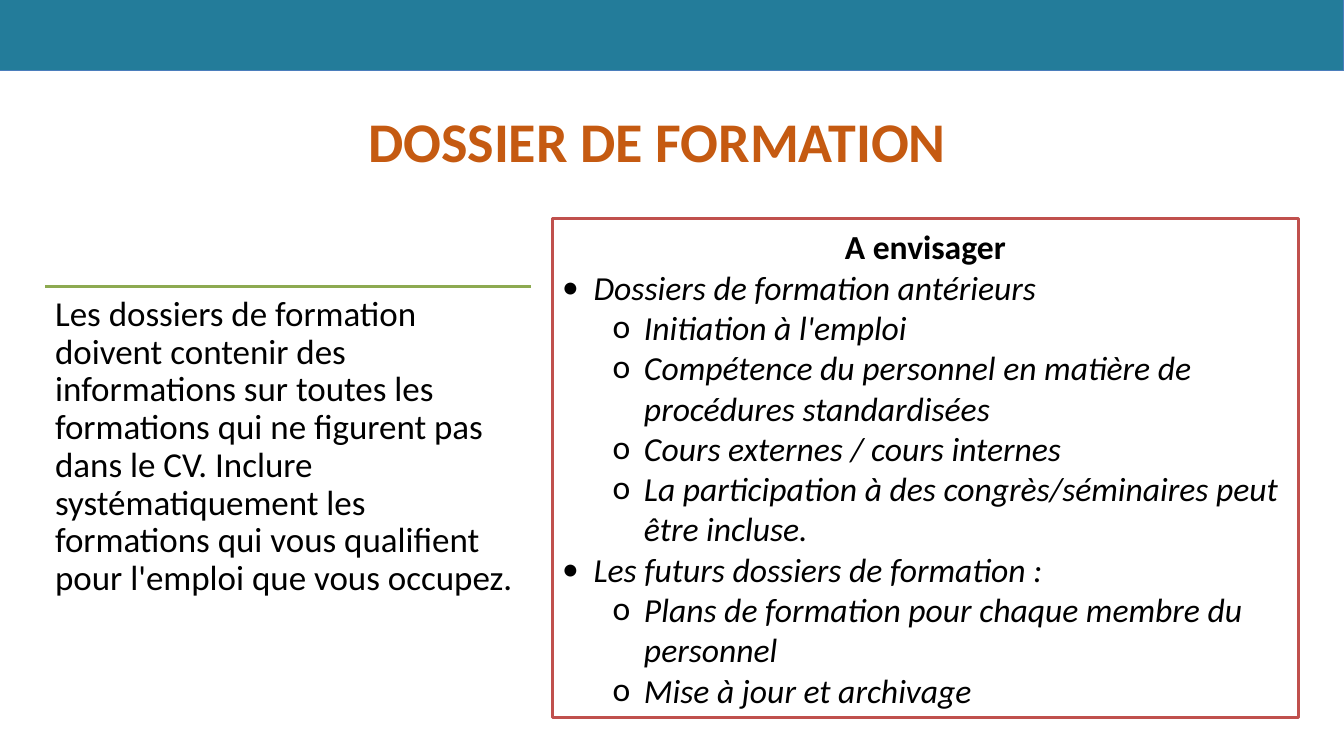
from dataclasses import dataclass

from lxml.etree import SubElement
from pptx import Presentation
from pptx.dml.color import RGBColor as Rgb
from pptx.enum.shapes import MSO_CONNECTOR as Connector, MSO_SHAPE as Shape
from pptx.enum.text import MSO_ANCHOR as Anchor, PP_ALIGN as Align
from pptx.oxml.ns import qn
from pptx.util import Cm, Pt

# Content
TITLE = "DOSSIER DE FORMATION "
INTRO = (
    "Les dossiers de formation doivent contenir des informations sur toutes les "
    "formations qui ne figurent pas dans le CV. Inclure systématiquement les "
    "formations qui vous qualifient pour l'emploi que vous occupez."
)
BOX_HEADING = "A envisager"
BOX_ITEMS = [
    (0, "Dossiers de formation antérieurs"),
    (1, "Initiation à l'emploi"),
    (1, "Compétence du personnel en matière de procédures standardisées"),
    (1, "Cours externes / cours internes"),
    (1, "La participation à des congrès/séminaires peut être incluse."),
    (0, "Les futurs dossiers de formation :"),
    (1, "Plans de formation pour chaque membre du personnel"),
    (1, "Mise à jour et archivage"),
]
BULLETS = ("•", "o")


@dataclass(frozen=True)
class Theme:
    font: str = "Calibri"
    black: Rgb = Rgb.from_string("000000")
    white: Rgb = Rgb.from_string("FFFFFF")
    banner: Rgb = Rgb.from_string("237C9A")
    banner_edge: Rgb = Rgb.from_string("4B7EBC")
    title: Rgb = Rgb.from_string("C55A11")
    rule: Rgb = Rgb.from_string("8DAA51")
    box_edge: Rgb = Rgb.from_string("C0504D")
    title_size: int = 40
    intro_size: int = 25
    box_size: int = 24


theme = Theme()

# Layout
SLIDE_WIDTH, SLIDE_HEIGHT = Cm(33.87), Cm(19.05)
INTRO_LEFT, INTRO_TOP, INTRO_WIDTH = Cm(1.14), Cm(7.21), Cm(12.24)
HANGING, LEVEL_STEP = Cm(0.79), Cm(1.27)


def style(paragraph, size, color=theme.black, bold=False, italic=False):
    for run in paragraph.runs:
        font = run.font
        font.name, font.size, font.color.rgb = theme.font, Pt(size), color
        font.bold, font.italic = bold, italic


def add_rectangle(slide, left, top, width, height, fill, edge, edge_width):
    shape = slide.shapes.add_shape(Shape.RECTANGLE, left, top, width, height)
    shape.shadow.inherit = False
    shape.fill.solid()
    shape.fill.fore_color.rgb = fill
    shape.line.color.rgb = edge
    shape.line.width = Pt(edge_width)
    return shape


def add_text(slide, left, top, width, height, text):
    text_frame = slide.shapes.add_textbox(left, top, width, height).text_frame
    text_frame.word_wrap = True
    text_frame.vertical_anchor = Anchor.TOP
    text_frame.text = text
    return text_frame


def set_bullet(paragraph, level):
    paragraph.level = level
    properties = paragraph._p.get_or_add_pPr()
    properties.set("marL", str(HANGING + level * LEVEL_STEP))
    properties.set("indent", str(-HANGING))
    SubElement(properties, qn("a:buFont"), typeface=theme.font)
    SubElement(properties, qn("a:buChar"), char=BULLETS[level])


def main():
    presentation = Presentation()
    presentation.slide_width, presentation.slide_height = SLIDE_WIDTH, SLIDE_HEIGHT
    slide = presentation.slides.add_slide(presentation.slide_layouts[6])

    # Banner
    add_rectangle(slide, 0, 0, SLIDE_WIDTH, Cm(1.78),
                  theme.banner, theme.banner_edge, 0.75)

    # Title
    title = add_text(slide, Cm(0.91), Cm(2.57), Cm(31.62), Cm(1.63), TITLE)
    title.margin_bottom = 0
    title.paragraphs[0].alignment = Align.CENTER
    style(title.paragraphs[0], theme.title_size, theme.title, bold=True)

    # Introduction under its rule
    rule = slide.shapes.add_connector(Connector.STRAIGHT, INTRO_LEFT, INTRO_TOP,
                                      INTRO_LEFT + INTRO_WIDTH, INTRO_TOP)
    rule.line.color.rgb = theme.rule
    rule.line.width = Pt(2)
    SubElement(rule._element.spPr, qn("a:effectLst"))

    intro = add_text(slide, INTRO_LEFT, INTRO_TOP, INTRO_WIDTH, Cm(9.27), INTRO)
    intro.margin_top = intro.margin_bottom = Cm(0.25)
    intro.paragraphs[0].line_spacing = 0.9
    style(intro.paragraphs[0], theme.intro_size)

    # Framed list
    box = add_rectangle(slide, Cm(13.92), Cm(5.51), Cm(18.8), Cm(12.57),
                        theme.white, theme.box_edge, 2)
    text_frame = box.text_frame
    text_frame.word_wrap = True
    text_frame.vertical_anchor = Anchor.MIDDLE
    text_frame.text = BOX_HEADING
    heading = text_frame.paragraphs[0]
    heading.alignment = Align.CENTER
    style(heading, theme.box_size, bold=True)
    for level, text in BOX_ITEMS:
        paragraph = text_frame.add_paragraph()
        paragraph.text = text
        paragraph.alignment = Align.LEFT
        set_bullet(paragraph, level)
        style(paragraph, theme.box_size, italic=True)

    presentation.save("out.pptx")


if __name__ == "__main__":
    main()
